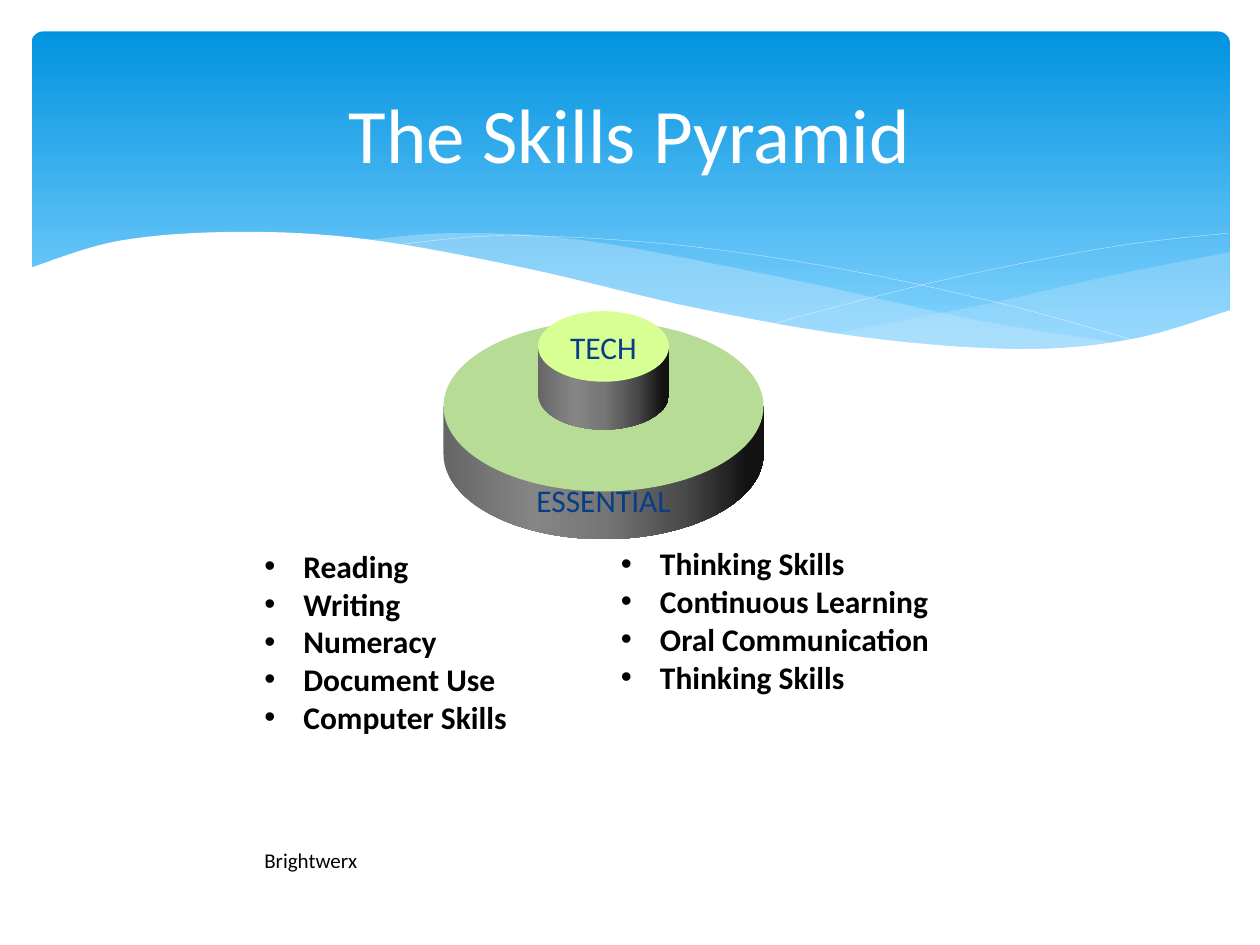
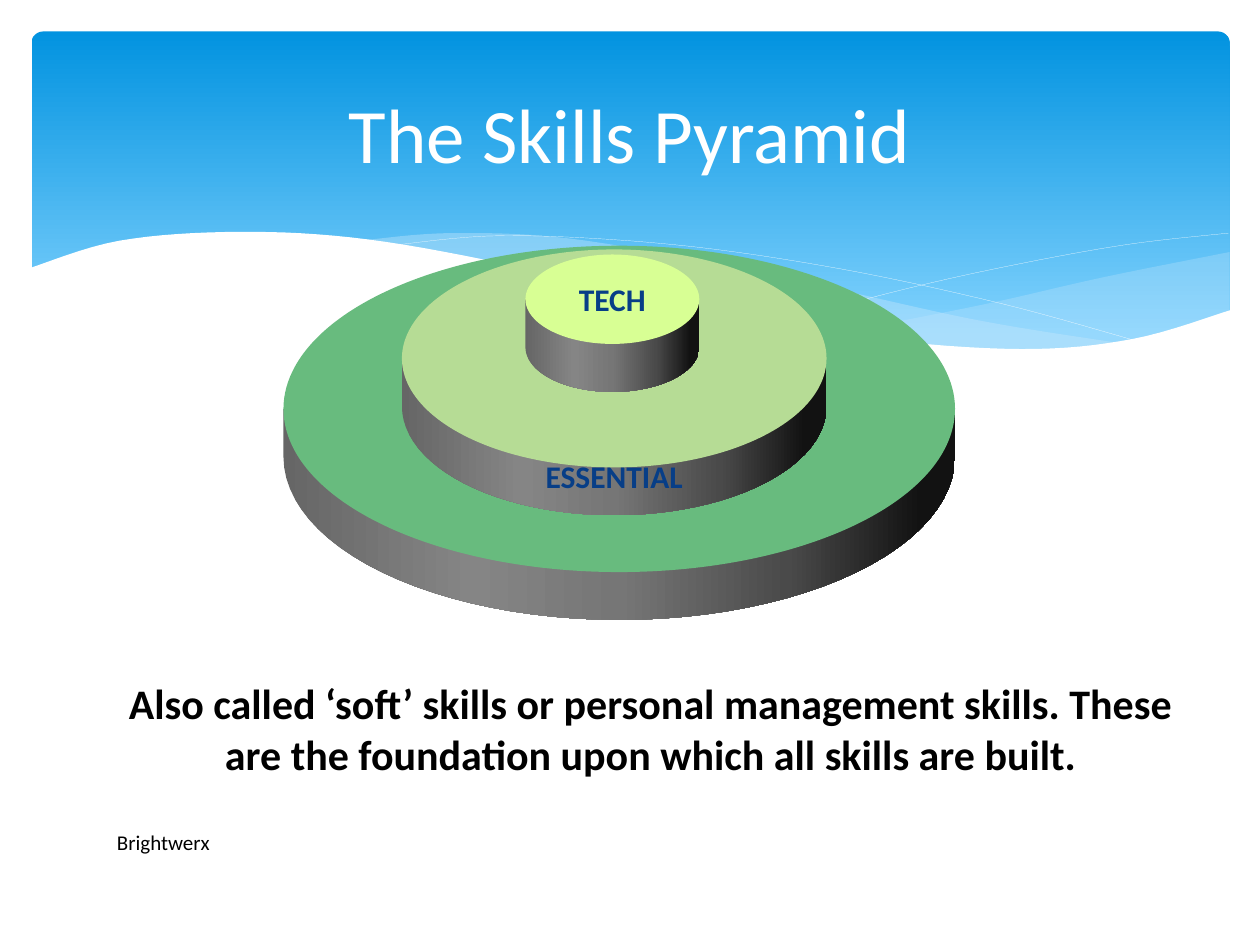
from dataclasses import dataclass
from math import cos, pi, sin

from lxml.etree import SubElement
from pptx import Presentation
from pptx.dml.color import RGBColor
from pptx.enum.shapes import MSO_SHAPE as Shape
from pptx.enum.text import MSO_ANCHOR as Anchor, PP_ALIGN as Align
from pptx.oxml.ns import qn
from pptx.util import Inches, Pt


@dataclass(frozen=True)
class Theme:
    """Colours, font and type sizes shared by the slides."""
    font: str = "Calibri"
    white: str = "FFFFFF"
    ink: str = "000000"
    label: str = "073E87"
    wave: str = "C6E7FC"
    tech: str = "D8FF94"
    essential: str = "B6DC95"
    employability: str = "68BB7E"
    band: tuple = ((0, "0293E0"), (90, "83D3FE"))
    rim: tuple = ((0, "666666"), (28, "858585"), (50, "767676"),
                  (75, "4A4A4A"), (95, "121212"), (100, "121212"))
    title_size: int = 44
    statement_size: int = 24
    body_size: int = 18
    credit_size: int = 12


THEME = Theme()
CREDIT = "Brightwerx"
DISC_DEPTH = 0.38
ARC_STEPS = 48
CURVE_STEPS = 8
BULLET_INDENT = 0.31


def rgb(color):
    """Turn a hex string into a colour object."""
    return RGBColor.from_string(color)


def curve(*knots):
    """Return points of a smooth (Catmull-Rom) curve through a few knots."""
    padded = [knots[0], *knots, knots[-1]]
    points = []
    for before, start, end, after in zip(padded, padded[1:], padded[2:], padded[3:]):
        for step in range(CURVE_STEPS):
            t = step / CURVE_STEPS
            points.append(tuple(
                b + (c - a) * t / 2
                + (2 * a - 5 * b + 4 * c - d) * t ** 2 / 2
                + (3 * b - a - 3 * c + d) * t ** 3 / 2
                for a, b, c, d in zip(before, start, end, after)))
    return points + [knots[-1]]


def front_arc(center_x, center_y, radius_x, radius_y):
    """Return points of the lower half of an ellipse, from right to left."""
    angles = [step * pi / ARC_STEPS for step in range(ARC_STEPS + 1)]
    return [(center_x + radius_x * cos(angle), center_y + radius_y * sin(angle))
            for angle in angles]


def fill_solid(shape, color, opacity=100):
    """Fill a shape with one colour at the given opacity in percent."""
    shape.fill.solid()
    shape.fill.fore_color.rgb = rgb(color)
    if opacity < 100:
        color_node = next(shape._element.spPr.iter(qn("a:srgbClr")))
        SubElement(color_node, qn("a:alpha"), val=str(opacity * 1000))


def fill_gradient(shape, stops, angle):
    """Fill a shape with a linear gradient of (percent, colour) stops."""
    shape.fill.gradient()
    shape.fill.gradient_angle = angle
    stop_list = next(shape._element.spPr.iter(qn("a:gsLst")))
    for stop in list(stop_list):
        stop_list.remove(stop)
    for percent, color in stops:
        stop = SubElement(stop_list, qn("a:gs"), pos=str(percent * 1000))
        SubElement(stop, qn("a:srgbClr"), val=color)


def add_freeform(slide, points, closed):
    """Add a shadowless freeform through points given in inches."""
    corners = [(Inches(x), Inches(y)) for x, y in points]
    builder = slide.shapes.build_freeform(*corners[0])
    builder.add_line_segments(corners[1:], close=closed)
    shape = builder.convert_to_shape()
    shape.shadow.inherit = False
    return shape


def add_area(slide, points):
    """Add a closed outline without a border."""
    shape = add_freeform(slide, points, closed=True)
    shape.line.fill.background()
    return shape


def add_hairline(slide, points):
    """Add a thin white open curve."""
    shape = add_freeform(slide, points, closed=False)
    shape.fill.background()
    shape.line.color.rgb = rgb(THEME.white)
    shape.line.width = Pt(0.1)


def add_preset(slide, kind, left, top, width, height):
    """Add a preset shape without shadow or line."""
    shape = slide.shapes.add_shape(
        kind, Inches(left), Inches(top), Inches(width), Inches(height))
    shape.shadow.inherit = False
    shape.line.fill.background()
    return shape


def style_paragraph(paragraph, text, size, color=THEME.ink, bold=False, align=Align.LEFT):
    """Write a paragraph in the theme font."""
    paragraph.text = text
    paragraph.alignment = align
    font = paragraph.font
    font.name, font.size, font.bold = THEME.font, Pt(size), bold
    font.color.rgb = rgb(color)


def add_text_box(slide, left, top, width, height, anchor=Anchor.TOP):
    """Add a wrapping text box and return its text frame."""
    box = slide.shapes.add_textbox(
        Inches(left), Inches(top), Inches(width), Inches(height))
    frame = box.text_frame
    frame.word_wrap = True
    frame.vertical_anchor = anchor
    return frame


def add_bullets(slide, left, top, height, items):
    """Add a column of bold bulleted skills and return its text frame."""
    frame = add_text_box(slide, left, top, 2.83, height)
    for index, item in enumerate(items):
        paragraph = frame.add_paragraph() if index else frame.paragraphs[0]
        properties = paragraph._p.get_or_add_pPr()
        properties.set("marL", str(Inches(BULLET_INDENT)))
        properties.set("indent", str(-Inches(BULLET_INDENT)))
        SubElement(properties, qn("a:buFont"), typeface="Arial")
        SubElement(properties, qn("a:buChar"), char="•")
        style_paragraph(paragraph, item, THEME.body_size, bold=True)
    return frame


def add_credit(frame, gap):
    """Close a text frame with the credit line, a gap in points below the text."""
    paragraph = frame.add_paragraph()
    paragraph.space_before = Pt(gap)
    style_paragraph(paragraph, CREDIT, THEME.credit_size)


def add_disc(slide, left, top, width, height, color):
    """Add a thick disc with a shaded rim and return its top face."""
    right, middle = left + width, top + height / 2
    arc = front_arc(left + width / 2, middle + DISC_DEPTH, width / 2, height / 2)
    rim = add_area(slide, [(right, middle), *arc, (left, middle)])
    fill_gradient(rim, THEME.rim, 0)
    face = add_preset(slide, Shape.OVAL, left, top, width, height)
    fill_solid(face, color)
    return face


def label_disc(frame, text, bold):
    """Write a centred disc label."""
    style_paragraph(frame.paragraphs[0], text, THEME.body_size, THEME.label,
                    bold, Align.CENTER)


def add_tech_disc(slide, left, top, width, height, bold=False):
    """Add the top disc with its label on the face."""
    frame = add_disc(slide, left, top, width, height, THEME.tech).text_frame
    frame.vertical_anchor = Anchor.MIDDLE
    frame.word_wrap = False
    label_disc(frame, "TECH", bold)


def add_essential_disc(slide, left, top, width, height, bold=False):
    """Add the essential skills disc with its label on the front rim."""
    add_disc(slide, left, top, width, height, THEME.essential)
    label_height = 0.4
    label_top = top + height - label_height / 3
    label_disc(add_text_box(slide, left, label_top, width, label_height, Anchor.MIDDLE),
               "ESSENTIAL", bold)


def add_waves(slide):
    """Add the translucent waves, the hairlines and the white wave that cuts the band."""
    right_crest = curve((6.61, 2.65), (7.79, 2.42), (8.76, 2.2), (9.76, 2))
    right_trough = curve((9.76, 2.47), (9.05, 2.69), (8.1, 2.78), (7.3, 2.74), (6.61, 2.65))
    fill_solid(add_area(slide, right_crest + right_trough), THEME.wave, 29)

    middle_crest = curve((2.86, 1.91), (3.61, 1.85), (4.65, 1.91), (6.29, 2.22),
                         (7.75, 2.54), (8.93, 2.73))
    middle_trough = curve((8.93, 2.73), (8.1, 2.78), (7.09, 2.72), (5.84, 2.52),
                          (4.49, 2.22), (3.62, 2.03), (2.86, 1.91))
    fill_solid(add_area(slide, middle_crest + middle_trough), THEME.wave, 40)

    add_hairline(slide, curve((3.09, 1.95), (4.01, 1.87), (5.33, 1.94), (6.65, 2.13),
                              (7.95, 2.41), (9.07, 2.72)))
    add_hairline(slide, curve((6.13, 2.57), (7.2, 2.29), (8.06, 2.1), (8.95, 1.94),
                              (9.75, 1.85)))

    left, right, bottom = 0.23, 9.77, 3.29
    white_crest = curve((left, 2.13), (0.95, 1.91), (1.9, 1.84), (2.92, 1.9), (4.18, 2.13),
                        (5.55, 2.45), (6.88, 2.68), (8.1, 2.77), (8.99, 2.69), (right, 2.46))
    white_wave = add_area(slide, white_crest + [(right, bottom), (left, bottom)])
    fill_solid(white_wave, THEME.white)


def add_base_slide(presentation):
    """Add a slide with the blue band, its waves and the title."""
    slide = presentation.slides.add_slide(presentation.slide_layouts[6])
    band = add_preset(slide, Shape.ROUNDED_RECTANGLE, 0.25, 0.25, 9.51, 2.7)
    band.adjustments[0] = 0.034
    fill_gradient(band, THEME.band, 270)
    add_waves(slide)
    title = add_text_box(slide, 0.5, 0.37, 9, 1.37, Anchor.MIDDLE)
    style_paragraph(title.paragraphs[0], "The Skills Pyramid", THEME.title_size,
                    THEME.white, align=Align.CENTER)
    return slide


def build_essential_slide(presentation):
    """Build the slide that lists the essential skills."""
    slide = add_base_slide(presentation)
    skills = add_bullets(slide, 2, 4.29, 3.13, [
        "Reading", "Writing", "Numeracy", "Document Use", "Computer Skills"])
    add_credit(skills, 64)
    add_essential_disc(slide, 3.52, 2.55, 2.54, 1.35)
    add_tech_disc(slide, 4.27, 2.47, 1.04, 0.56)
    add_bullets(slide, 4.83, 4.27, 1.92, [
        "Thinking Skills", "Continuous Learning", "Oral Communication", "Thinking Skills"])


def build_employability_slide(presentation):
    """Build the slide on the skills at the foundation."""
    slide = add_base_slide(presentation)
    add_disc(slide, 2.25, 1.95, 5.33, 2.59, THEME.employability)
    add_essential_disc(slide, 3.19, 1.98, 3.37, 1.73, bold=True)
    add_tech_disc(slide, 4.17, 2.02, 1.38, 0.71, bold=True)
    statement = add_text_box(slide, 0.83, 5.33, 8.67, 1.92)
    style_paragraph(
        statement.paragraphs[0],
        "Also called ‘soft’ skills or personal management skills. "
        "These are the foundation upon which all skills are built.",
        THEME.statement_size, bold=True, align=Align.CENTER)
    add_credit(statement, 29)


def main():
    """Build and save the presentation."""
    presentation = Presentation()
    presentation.slide_width, presentation.slide_height = Inches(10), Inches(7.5)
    build_essential_slide(presentation)
    build_employability_slide(presentation)
    presentation.save("out.pptx")


if __name__ == "__main__":
    main()
